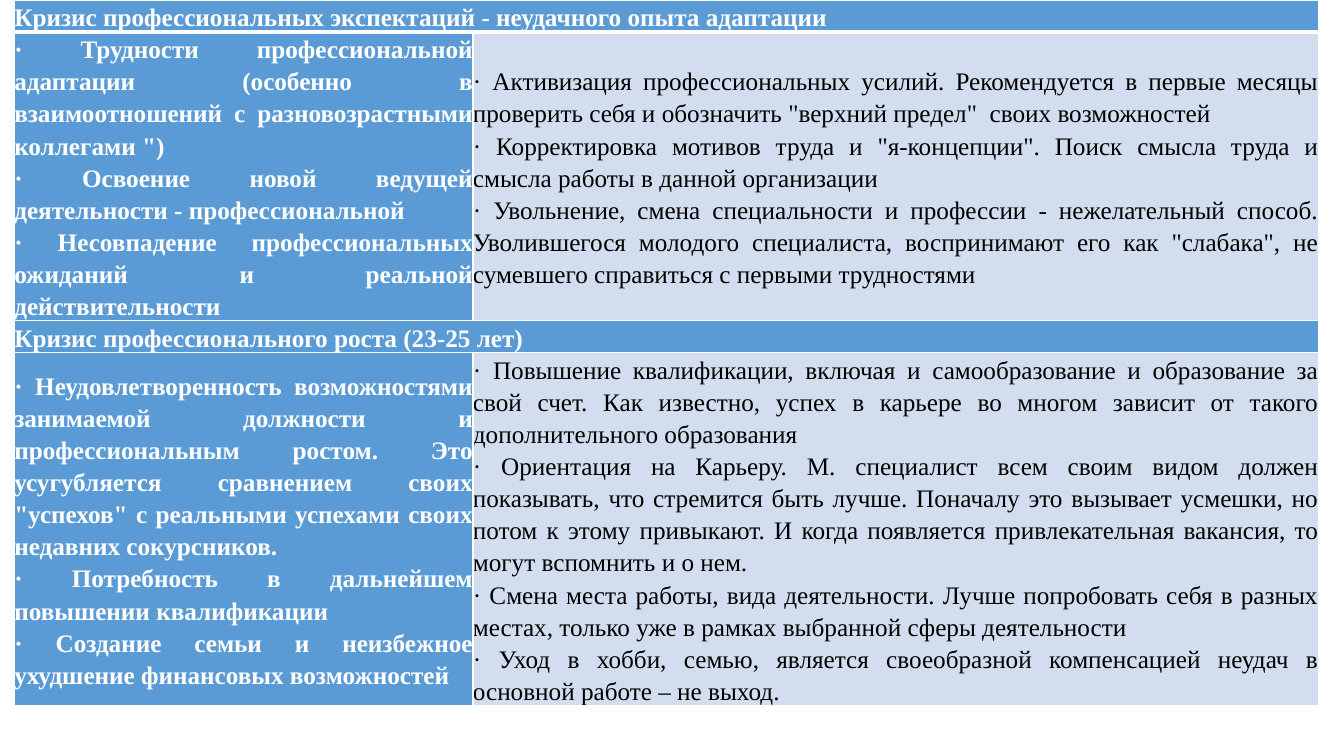
from lxml import etree
from pptx import Presentation
from pptx.dml.color import RGBColor
from pptx.enum.text import MSO_ANCHOR, PP_ALIGN
from pptx.oxml.ns import qn
from pptx.util import Pt

JUSTIFY = PP_ALIGN.JUSTIFY
MIDDLE = MSO_ANCHOR.MIDDLE
FONT = "Times New Roman"
COLORS = {
    "blue": "5B9BD5",
    "pale": "D2DEEF",
    "white": "FFFFFF",
    "black": "000000",
}
COLUMN_WIDTHS = (327.6, 604.1)
ROW_HEIGHTS = (8, 85.7, 8, 120.2)
TABLE_LEFT, TABLE_TOP, TABLE_HEIGHT = 10.2, 0, 546.5

# Each crisis: heading, its signs, ways out of it
CRISES = [
    (
        "Кризис профессиональных экспектаций - неудачного опыта адаптации",
        [
            "· Трудности профессиональной адаптации (особенно в взаимоотношений "
            "с разновозрастными коллегами \")",
            "· Освоение новой ведущей деятельности - профессиональной",
            "· Несовпадение профессиональных ожиданий и реальной действительности",
        ],
        [
            "· Активизация профессиональных усилий. Рекомендуется в первые месяцы "
            "проверить себя и обозначить \"верхний предел\"  своих возможностей",
            "· Корректировка мотивов труда и \"я-концепции\". Поиск смысла труда "
            "и смысла работы в данной организации",
            "· Увольнение, смена специальности и профессии - нежелательный способ. "
            "Уволившегося молодого специалиста, воспринимают его как \"слабака\", "
            "не сумевшего справиться с первыми трудностями",
        ],
    ),
    (
        "Кризис профессионального роста (23-25 лет)",
        [
            "· Неудовлетворенность возможностями занимаемой должности и "
            "профессиональным ростом. Это усугубляется сравнением своих "
            "\"успехов\" с реальными успехами своих недавних сокурсников.",
            "· Потребность в дальнейшем повышении квалификации",
            "· Создание семьи и неизбежное ухудшение финансовых возможностей",
        ],
        [
            "· Повышение квалификации, включая и самообразование и образование за "
            "свой счет. Как известно, успех в карьере во многом зависит от такого "
            "дополнительного образования",
            "· Ориентация на Карьеру. М. специалист всем своим видом должен "
            "показывать, что стремится быть лучше. Поначалу это вызывает усмешки, "
            "но потом к этому привыкают. И когда появляется привлекательная "
            "вакансия, то могут вспомнить и о нем.",
            "· Смена места работы, вида деятельности. Лучше попробовать себя в "
            "разных местах, только уже в рамках выбранной сферы деятельности",
            "· Уход в хобби, семью, является своеобразной компенсацией неудач "
            "в основной работе – не выход.",
        ],
    ),
]


def write_text(frame, lines, color="white", bold=True, size=18):
    for index, line in enumerate(lines):
        para = frame.paragraphs[0] if index == 0 else frame.add_paragraph()
        para.alignment = JUSTIFY
        para.line_spacing = 1.15
        span = para.add_run()
        span.text = line
        span.font.name = FONT
        span.font.size = Pt(size)
        span.font.bold = bold
        span.font.color.rgb = RGBColor.from_string(COLORS[color])


def set_borders(cell, bottom=1):
    """Draw white cell borders; call before the fill, which must follow them."""
    properties = cell._tc.get_or_add_tcPr()
    for side, width in (("L", 1), ("R", 1), ("T", 1), ("B", bottom)):
        line = etree.SubElement(properties, qn(f"a:ln{side}"), w=str(Pt(width)))
        fill = etree.SubElement(line, qn("a:solidFill"))
        etree.SubElement(fill, qn("a:srgbClr"), val=COLORS["white"])


def style_cell(cell, fill, bottom=1):
    set_borders(cell, bottom)
    cell.fill.solid()
    cell.fill.fore_color.rgb = RGBColor.from_string(COLORS[fill])
    cell.margin_left = cell.margin_right = 0
    cell.margin_top = cell.margin_bottom = 0
    cell.vertical_anchor = MIDDLE


def add_crisis_table(page):
    frame = page.shapes.add_table(
        len(ROW_HEIGHTS), len(COLUMN_WIDTHS), Pt(TABLE_LEFT), Pt(TABLE_TOP),
        Pt(sum(COLUMN_WIDTHS)), Pt(TABLE_HEIGHT),
    )
    table = frame.table
    table.first_row = table.horz_banding = False
    for column, width in zip(table.columns, COLUMN_WIDTHS):
        column.width = Pt(width)
    for row, height in zip(table.rows, ROW_HEIGHTS):
        row.height = Pt(height)
    frame.height = Pt(TABLE_HEIGHT)
    return table


def fill_crisis(table, top_row, heading, signs, solutions):
    title, title_end = (table.cell(top_row, column) for column in (0, 1))
    for cell in (title, title_end):
        style_cell(cell, "blue", bottom=3 if top_row == 0 else 1)
    title.merge(title_end)
    write_text(title.text_frame, [heading])

    left, right = (table.cell(top_row + 1, column) for column in (0, 1))
    style_cell(left, "blue")
    write_text(left.text_frame, signs)
    style_cell(right, "pale")
    write_text(right.text_frame, solutions, color="black", bold=False)


def main():
    deck = Presentation()
    deck.slide_width, deck.slide_height = Pt(960), Pt(540)
    page = deck.slides.add_slide(deck.slide_layouts[6])
    table = add_crisis_table(page)
    for index, crisis in enumerate(CRISES):
        fill_crisis(table, 2 * index, *crisis)
    deck.save("out.pptx")


if __name__ == "__main__":
    main()
